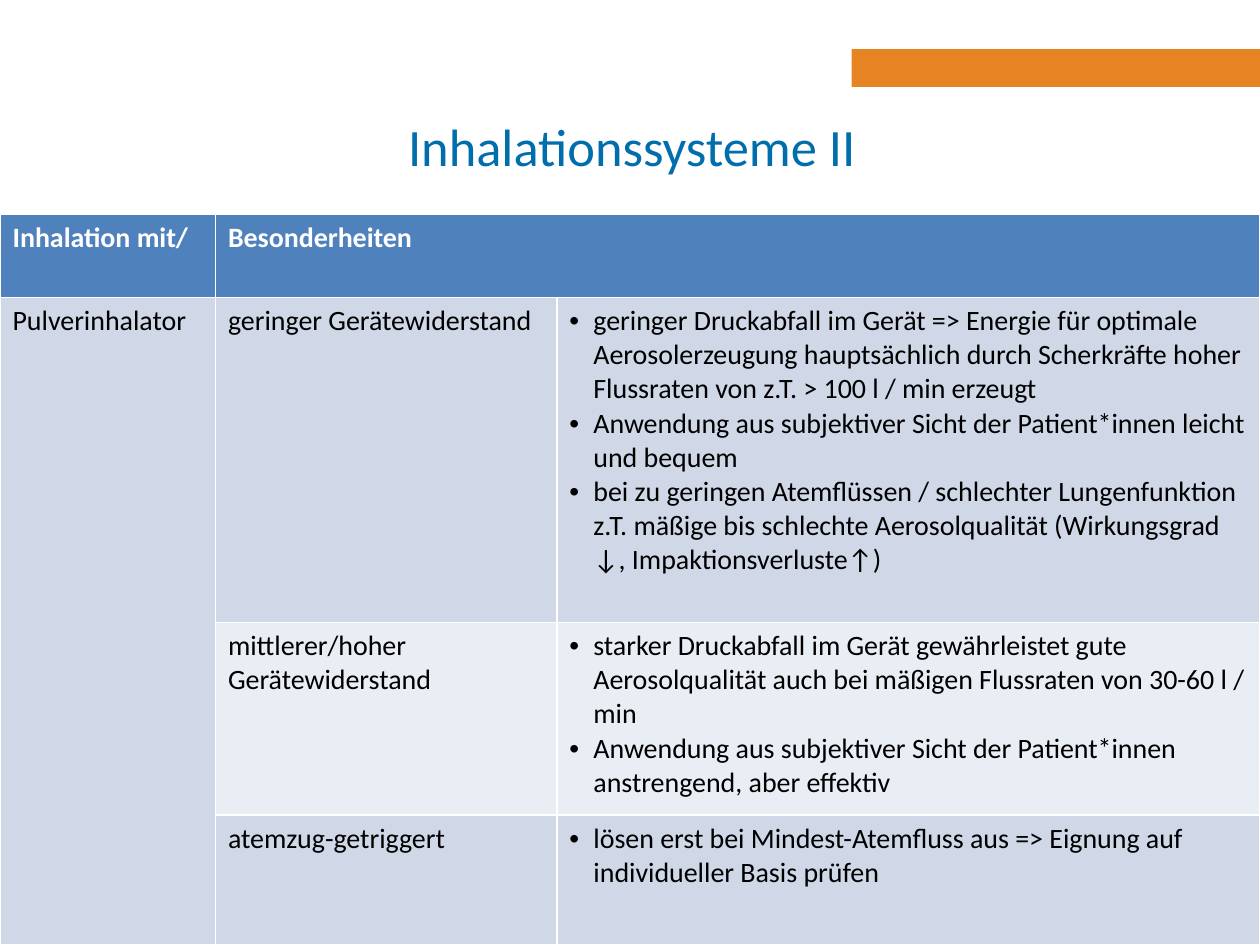
from lxml import etree
from pptx import Presentation
from pptx.dml.color import RGBColor
from pptx.enum.shapes import MSO_SHAPE
from pptx.enum.text import MSO_ANCHOR, PP_ALIGN
from pptx.oxml.ns import qn
from pptx.util import Inches, Pt

RECTANGLE = MSO_SHAPE.RECTANGLE
MIDDLE = MSO_ANCHOR.MIDDLE
CENTER = PP_ALIGN.CENTER

FONT = "Calibri"
ORANGE, BLUE, HEADER_BLUE = "E68323", "006EAC", "4F81BD"
BANDS = ("D0D8E8", "E9EDF4")
WHITE, BLACK = "FFFFFF", "000000"
BULLET_INDENT = 0.19

COLUMN_WIDTHS = (1.71, 2.71, 5.58)
ROW_HEIGHTS = (0.66, 2.58, 1.53, 1.03)
HEADINGS = ("Inhalation mit/", "Besonderheiten")
DEVICE = "Pulverinhalator"
RESISTANCES = (
    ("geringer Gerätewiderstand", (
        "geringer Druckabfall im Gerät => Energie für optimale Aerosolerzeugung "
        "hauptsächlich durch Scherkräfte hoher Flussraten von z.T. > 100 l / min erzeugt",
        "Anwendung aus subjektiver Sicht der Patient*innen leicht und bequem",
        "bei zu geringen Atemflüssen / schlechter Lungenfunktion z.T. mäßige bis "
        "schlechte Aerosolqualität (Wirkungsgrad ↓, Impaktionsverluste↑)",
    )),
    ("mittlerer/hoher Gerätewiderstand", (
        "starker Druckabfall im Gerät gewährleistet gute Aerosolqualität auch bei "
        "mäßigen Flussraten von 30-60 l / min",
        "Anwendung aus subjektiver Sicht der Patient*innen anstrengend, aber effektiv",
    )),
    ("atemzug-getriggert", (
        "lösen erst bei Mindest-Atemfluss aus => Eignung auf individueller Basis prüfen",
    )),
)


def color(hex_value):
    return RGBColor.from_string(hex_value)


def set_font(paragraph, size, hex_value, bold=False):
    font = paragraph.font
    font.name, font.size, font.bold = FONT, Pt(size), bold
    font.color.rgb = color(hex_value)


def add_bullet(paragraph):
    properties = paragraph._p.get_or_add_pPr()
    properties.set("marL", str(Inches(BULLET_INDENT)))
    properties.set("indent", str(-Inches(BULLET_INDENT)))
    etree.SubElement(properties, qn("a:buFont")).set("typeface", "Arial")
    etree.SubElement(properties, qn("a:buChar")).set("char", "•")


def fill_cell(cell, lines, fill, text_color=BLACK, bold=False, bulleted=False):
    cell.fill.solid()
    cell.fill.fore_color.rgb = color(fill)
    cell.text = "\n".join(lines)
    for paragraph in cell.text_frame.paragraphs:
        if bulleted:
            add_bullet(paragraph)
        set_font(paragraph, 16, text_color, bold)


def add_accent_bar(slide, box):
    bar = slide.shapes.add_shape(RECTANGLE, *map(Inches, box))
    bar.shadow.inherit = False
    bar.fill.solid()
    bar.fill.fore_color.rgb = color(ORANGE)
    bar.line.fill.background()


def place_title(slide, box, text):
    title = slide.shapes.title
    title.left, title.top, title.width, title.height = map(Inches, box)
    title.text_frame.text = text
    title.text_frame.vertical_anchor = MIDDLE
    heading = title.text_frame.paragraphs[0]
    heading.alignment = CENTER
    set_font(heading, 30, BLUE)


def add_inhaler_table(slide, box):
    table = slide.shapes.add_table(
        len(ROW_HEIGHTS), len(COLUMN_WIDTHS), *map(Inches, box)).table
    _, _, width, height = box
    for column, share in zip(table.columns, COLUMN_WIDTHS):
        column.width = Inches(width * share / sum(COLUMN_WIDTHS))
    for row, share in zip(table.rows, ROW_HEIGHTS):
        row.height = Inches(height * share / sum(ROW_HEIGHTS))

    # Header row and the device cell that spans all resistances
    table.cell(0, 1).merge(table.cell(0, 2))
    table.cell(1, 0).merge(table.cell(len(RESISTANCES), 0))
    for column, heading in enumerate(HEADINGS):
        fill_cell(table.cell(0, column), [heading], HEADER_BLUE, WHITE, bold=True)
    fill_cell(table.cell(1, 0), [DEVICE], BANDS[0])

    # One banded row for each resistance
    for row, (resistance, features) in enumerate(RESISTANCES, start=1):
        band = BANDS[(row - 1) % 2]
        fill_cell(table.cell(row, 1), [resistance], band)
        fill_cell(table.cell(row, 2), features, band, bulleted=True)


def main():
    presentation = Presentation()
    presentation.slide_width, presentation.slide_height = Inches(10), Inches(7.5)
    slide = presentation.slides.add_slide(presentation.slide_layouts[5])
    add_accent_bar(slide, (6.76, 0.39, 3.24, 0.3))
    place_title(slide, (1.48, 0.69, 7.07, 0.93), "Inhalationssysteme II")
    add_inhaler_table(slide, (0, 1.7, 10, 5.8))
    presentation.save("out.pptx")


if __name__ == "__main__":
    main()
